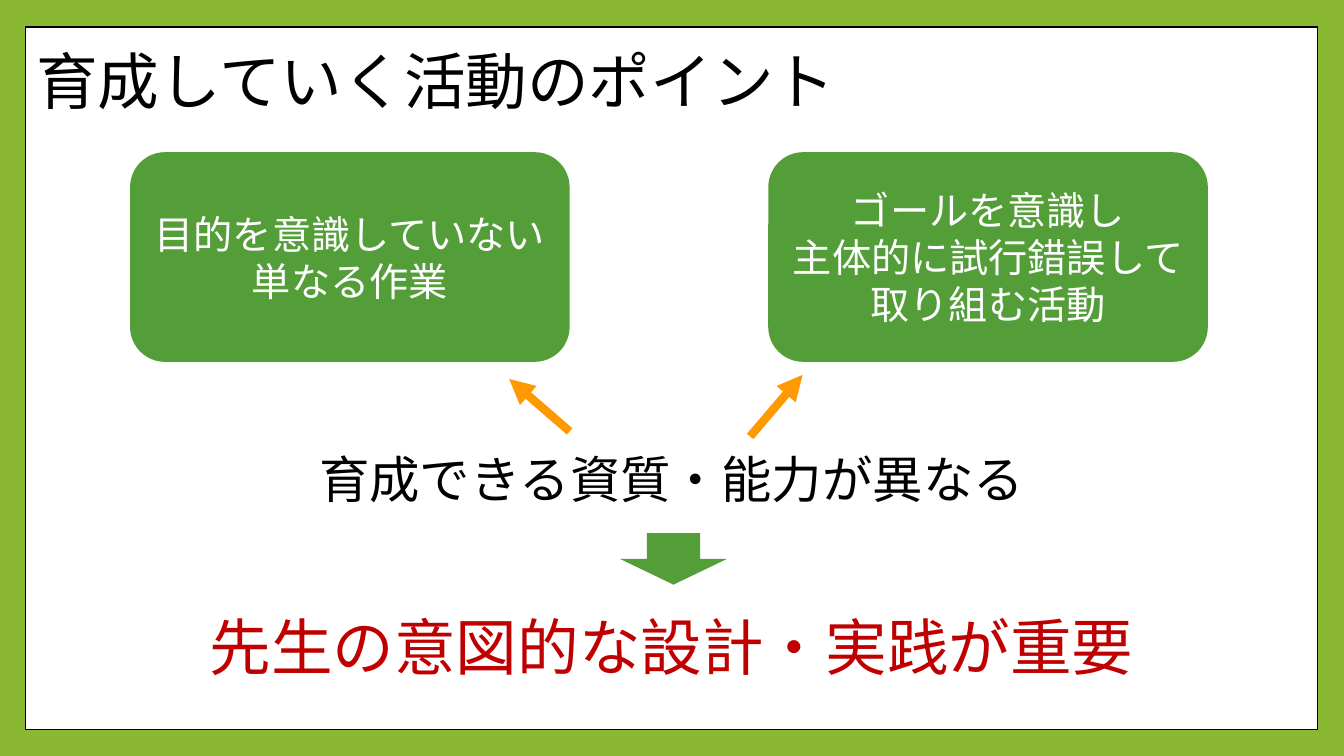
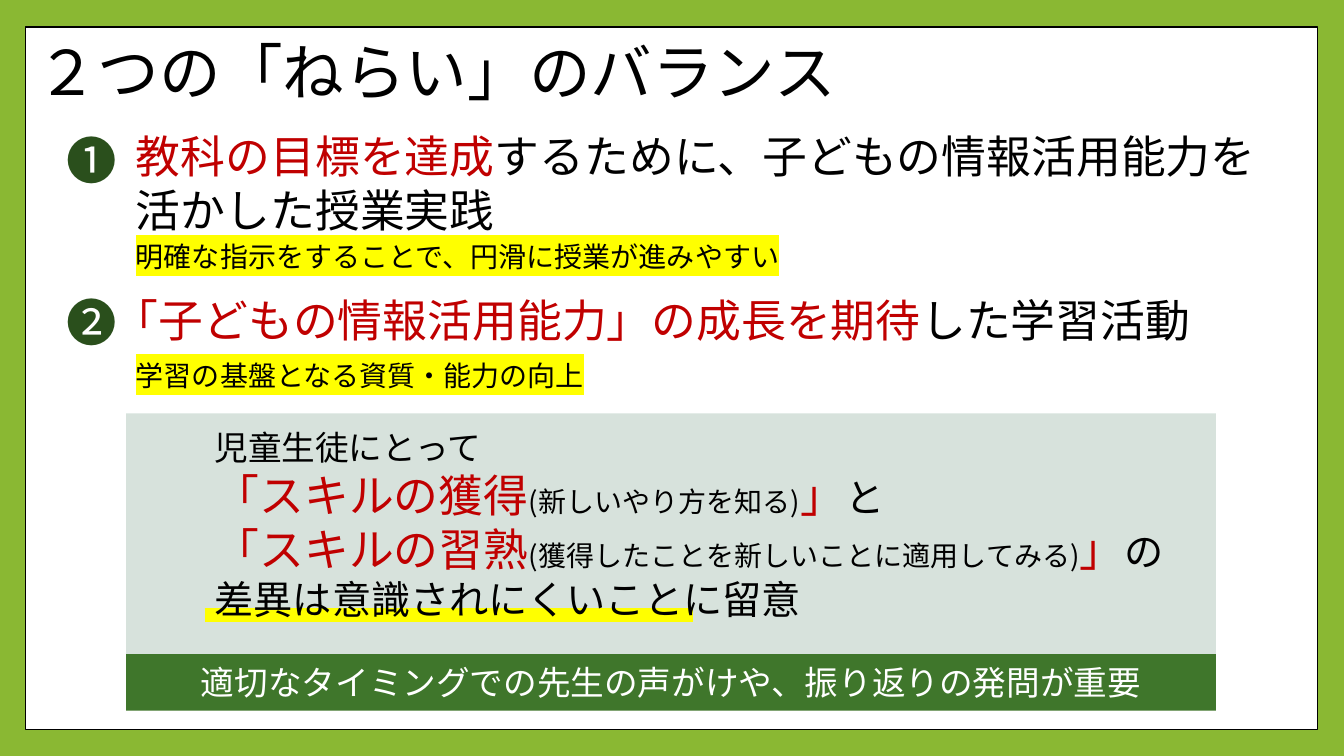
from lxml import etree
from pptx import Presentation
from pptx.dml.color import RGBColor
from pptx.enum.shapes import MSO_CONNECTOR, MSO_SHAPE
from pptx.enum.text import MSO_ANCHOR, MSO_AUTO_SIZE, PP_ALIGN
from pptx.oxml.ns import qn
from pptx.util import Emu, Pt

PX = 9144  # 100 px to the inch
FONT = "Noto Sans CJK JP"
COLORS = {
    "frame": "8AB833", "white": "FFFFFF", "black": "000000",
    "green": "549E39", "dark": "3F762B", "mark": "2A4F1C",
    "pale": "D7E2DC", "red": "C00000", "orange": "FF9900",
    "yellow": "FFFF00",
}
LEFT, CENTER = PP_ALIGN.LEFT, PP_ALIGN.CENTER
TOP, MIDDLE = MSO_ANCHOR.TOP, MSO_ANCHOR.MIDDLE
RECT, ROUND, DOWN = MSO_SHAPE.RECTANGLE, MSO_SHAPE.ROUNDED_RECTANGLE, MSO_SHAPE.DOWN_ARROW
TITLE_ONLY = 5


def box(*lengths):
    return [Emu(n * PX) for n in lengths]


def rgb(name):
    return RGBColor.from_string(COLORS[name])


def add_run(p, text, size, color, highlight=None):
    r = p.add_run()
    r.text = text
    r.font.size = Pt(size)
    r.font.color.rgb = rgb(color)
    r.font.name = FONT
    latin = r.font._element.find(qn("a:latin"))
    ea = etree.Element(qn("a:ea"), typeface=FONT)
    latin.addnext(ea)
    if highlight:
        hl = etree.Element(qn("a:highlight"))
        etree.SubElement(hl, qn("a:srgbClr"), val=COLORS[highlight])
        latin.addprevious(hl)


def write(tf, lines, align=LEFT, anchor=TOP):
    """Fill a text frame; each line is a list of (text, size, color[, highlight])."""
    tf.word_wrap = True
    tf.auto_size = MSO_AUTO_SIZE.NONE
    tf.vertical_anchor = anchor
    for i, runs in enumerate(lines):
        p = tf.paragraphs[0] if i == 0 else tf.add_paragraph()
        p.alignment = align
        for run in runs:
            add_run(p, *run)


def add_text(s, at, lines, align=LEFT):
    write(s.shapes.add_textbox(*box(*at)).text_frame, lines, align)


def add_block(s, kind, at, fill, lines=()):
    """Filled shape without outline, with centred text."""
    sp = s.shapes.add_shape(kind, *box(*at))
    sp.shadow.inherit = False
    sp.fill.solid()
    sp.fill.fore_color.rgb = rgb(fill)
    sp.line.fill.background()
    if lines:
        tf = sp.text_frame
        tf.margin_left = tf.margin_right = tf.margin_top = tf.margin_bottom = 0
        write(tf, lines, CENTER, MIDDLE)
    return sp


def add_line(s, ends, color, width, arrow=False):
    line = s.shapes.add_connector(MSO_CONNECTOR.STRAIGHT, *box(*ends))
    line.line.color.rgb = rgb(color)
    line.line.width = Pt(width)
    if arrow:
        etree.SubElement(line.line._get_or_add_ln(), qn("a:tailEnd"), type="triangle")
    etree.SubElement(line.element.spPr, qn("a:effectLst"))


def add_slide(prs, title, title_height):
    s = prs.slides.add_slide(prs.slide_layouts[TITLE_ONLY])
    sp = s.shapes.title
    sp.left, sp.top, sp.width, sp.height = box(26, 27, 1280, title_height)
    write(sp.text_frame, [[(title, 44, "black")]], LEFT, MIDDLE)
    sp.text_frame.paragraphs[0].line_spacing = 0.9
    return s


def set_master(prs, s):
    """Green frame and white sheet, shared by all slides."""
    master = prs.slide_master
    master.background.fill.solid()
    master.background.fill.fore_color.rgb = rgb("frame")
    sheet = add_block(s, RECT, (25, 27, 1282, 697), "white")
    sheet.line.color.rgb = rgb("black")
    sheet.line.width = Pt(1)
    sheet.element.nvSpPr.cNvPr.set("id", "50")
    master.shapes.element.insert(2, sheet.element)


def add_aim(s, mark, mark_top, heading_at, heading, note_at, note):
    """Numbered aim with a highlighted note under it."""
    add_text(s, heading_at, [heading])
    add_text(s, (56, mark_top, 69, 71), [[(mark, 36, "mark")]])
    add_text(s, note_at, [[(note, 20, "black", "yellow")]])


def skill_line(skill, meaning, ending):
    return [("「" + skill, 32, "red"), (meaning, 20, "black"),
            ("」", 32, "red"), (ending, 28, "black")]


def build_points(s):
    # Two kinds of activity
    cards = [
        (129, ["目的を意識していない", "単なる作業"]),
        (762, ["ゴールを意識し", "主体的に試行錯誤して", "取り組む活動"]),
    ]
    for x, lines in cards:
        add_block(s, ROUND, (x, 151, 436, 208), "green",
                  [[(text, 28, "white")] for text in lines])

    # Difference and arrows to the cards
    add_text(s, (287, 440, 758, 71),
             [[("育成できる資質・能力が異なる", 36, "black")]], CENTER)
    for ends in ((565, 428, 505, 376), (744, 433, 796, 372)):
        add_line(s, ends, "orange", 6, arrow=True)

    # Conclusion
    add_block(s, DOWN, (615, 529, 106, 51), "green")
    add_text(s, (183, 599, 967, 84),
             [[("先生の意図的な設計・実践が重要", 44, "red")]], CENTER)


def build_balance(s):
    # Two aims
    add_aim(s, "❶", 123, (125, 123, 1144, 118),
            [("教科の目標を達成", 32, "red"),
             ("するために、子どもの情報活用能力を活かした授業実践", 32, "black")],
            (125, 233, 667, 44), "明確な指示をすることで、円滑に授業が進みやすい")
    add_aim(s, "❷", 284, (103, 285, 1144, 64),
            [("「子どもの情報活用能力」の成長を期待", 32, "red"),
             ("した学習活動", 32, "black")],
            (125, 351, 696, 44), "学習の基盤となる資質・能力の向上")

    # Panel on skills
    add_block(s, RECT, (125, 410, 1081, 245), "pale")
    add_line(s, (203, 610, 687, 610), "yellow", 10)
    add_text(s, (203, 419, 1004, 205), [
        [("児童生徒にとって", 24, "black")],
        skill_line("スキルの獲得", "(新しいやり方を知る)", "と"),
        skill_line("スキルの習熟", "(獲得したことを新しいことに適用してみる)", "の"),
        [("差異は意識されにくいことに留意", 28, "black")],
    ])

    # Closing band
    add_block(s, RECT, (125, 649, 1081, 56), "dark",
              [[("適切なタイミングでの先生の声がけや、振り返りの発問が重要", 24, "white")]])


def main():
    prs = Presentation()
    prs.slide_width, prs.slide_height = box(1333, 750)
    points = add_slide(prs, "育成していく活動のポイント", 114)
    set_master(prs, points)
    build_points(points)
    build_balance(add_slide(prs, "２つの「ねらい」のバランス", 95))
    prs.save("out.pptx")


if __name__ == "__main__":
    main()
